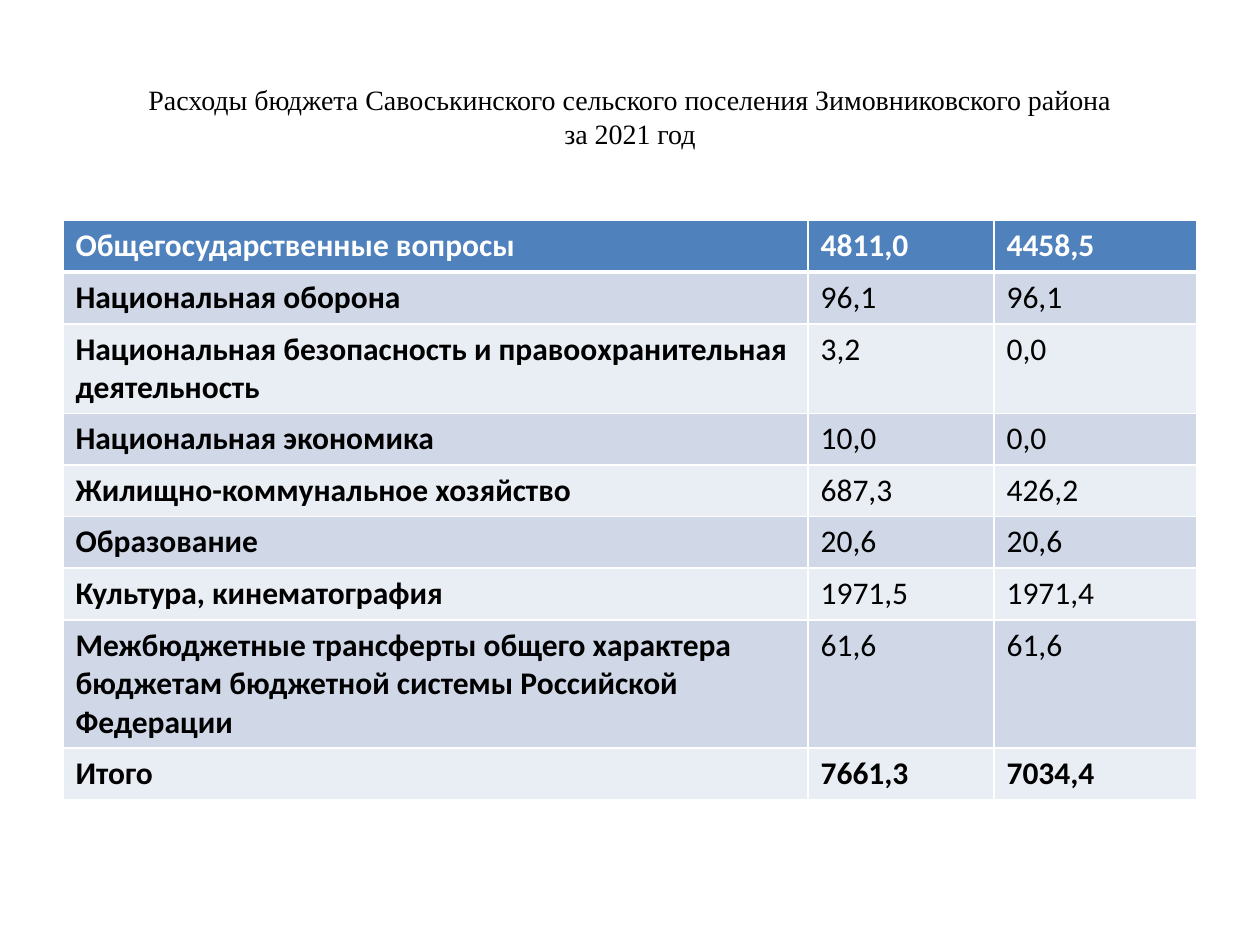
from dataclasses import dataclass

from lxml.etree import SubElement
from pptx import Presentation
from pptx.dml.color import RGBColor as RGB
from pptx.enum.text import MSO_ANCHOR as Anchor, MSO_AUTO_SIZE as AutoSize, PP_ALIGN as Align
from pptx.oxml.ns import qn
from pptx.util import Inches, Pt


@dataclass(frozen=True)
class Theme:
    ink: str = "000000"
    paper: str = "FFFFFF"
    header: str = "4F81BD"
    bands: tuple = ("D0D8E8", "E9EDF4")
    title_font: str = "Times New Roman"
    table_font: str = "Calibri"
    title_size: int = 16
    table_size: int = 18
    thin: int = 1
    thick: int = 3


THEME = Theme()
WIDTH, HEIGHT = Inches(10), Inches(7.5)
MARGIN = 0.05  # share of the slide's width
COLUMN_SHARES = (0.657, 0.164, 0.179)  # shares of the table's width
ROW_HEIGHT = Inches(0.41)

TITLE = "Расходы бюджета Савоськинского сельского поселения Зимовниковского района\nза 2021 год"
EXPENSES = [
    ("Общегосударственные вопросы", "4811,0", "4458,5"),
    ("Национальная оборона", "96,1", "96,1"),
    ("Национальная безопасность и правоохранительная деятельность", "3,2", "0,0"),
    ("Национальная экономика", "10,0", "0,0"),
    ("Жилищно-коммунальное хозяйство", "687,3", "426,2"),
    ("Образование", "20,6", "20,6"),
    ("Культура, кинематография", "1971,5", "1971,4"),
    ("Межбюджетные трансферты общего характера бюджетам бюджетной системы "
     "Российской Федерации", "61,6", "61,6"),
    ("Итого", "7661,3", "7034,4"),
]


def write_text(frame, text, *, font, size, color, bold=False, align=Align.LEFT):
    """Fill a text frame with one paragraph; newlines become line breaks."""
    para = frame.paragraphs[0]
    para.alignment = align
    for index, line in enumerate(text.split("\n")):
        if index:
            para.add_line_break()
        span = para.add_run()
        span.text = line
        span.font.name, span.font.size, span.font.bold = font, Pt(size), bold
        span.font.color.rgb = RGB.from_string(color)


def set_borders(cell, bottom):
    """Draw the cell's borders; they must come before the fill in the XML."""
    properties = cell._tc.get_or_add_tcPr()
    widths = {"L": THEME.thin, "R": THEME.thin, "T": THEME.thin, "B": bottom}
    for side, width in widths.items():
        line = SubElement(properties, qn(f"a:ln{side}"), w=str(Pt(width)))
        fill = SubElement(line, qn("a:solidFill"))
        SubElement(fill, qn("a:srgbClr"), val=THEME.paper)


def add_title(page, text):
    box = page.shapes.title
    box.left, box.top = int(WIDTH * MARGIN), int(HEIGHT * 0.04)
    box.width, box.height = int(WIDTH * (1 - 2 * MARGIN)), Inches(1.25)
    frame = box.text_frame
    frame.word_wrap, frame.auto_size = True, AutoSize.NONE
    frame.vertical_anchor = Anchor.MIDDLE
    write_text(frame, text, font=THEME.title_font, size=THEME.title_size,
               color=THEME.ink, align=Align.CENTER)


def add_expense_table(page, rows):
    width = int(WIDTH * (1 - 2 * MARGIN))
    table = page.shapes.add_table(
        len(rows), len(COLUMN_SHARES), int(WIDTH * MARGIN), Inches(1.75),
        width, ROW_HEIGHT * len(rows)).table
    for column, share in zip(table.columns, COLUMN_SHARES):
        column.width = int(width * share)
    last = len(rows) - 1
    for row, values in enumerate(rows):
        is_header = row == 0
        background = THEME.header if is_header else THEME.bands[(row - 1) % 2]
        for column, value in enumerate(values):
            cell = table.cell(row, column)
            set_borders(cell, bottom=THEME.thick if is_header else THEME.thin)
            cell.fill.solid()
            cell.fill.fore_color.rgb = RGB.from_string(background)
            write_text(cell.text_frame, value, font=THEME.table_font, size=THEME.table_size,
                       color=THEME.paper if is_header else THEME.ink,
                       bold=column == 0 or row in (0, last))


def main():
    deck = Presentation()
    deck.slide_width, deck.slide_height = WIDTH, HEIGHT
    page = deck.slides.add_slide(deck.slide_layouts[5])  # title only
    add_title(page, TITLE)
    add_expense_table(page, EXPENSES)
    deck.save("out.pptx")


if __name__ == "__main__":
    main()
